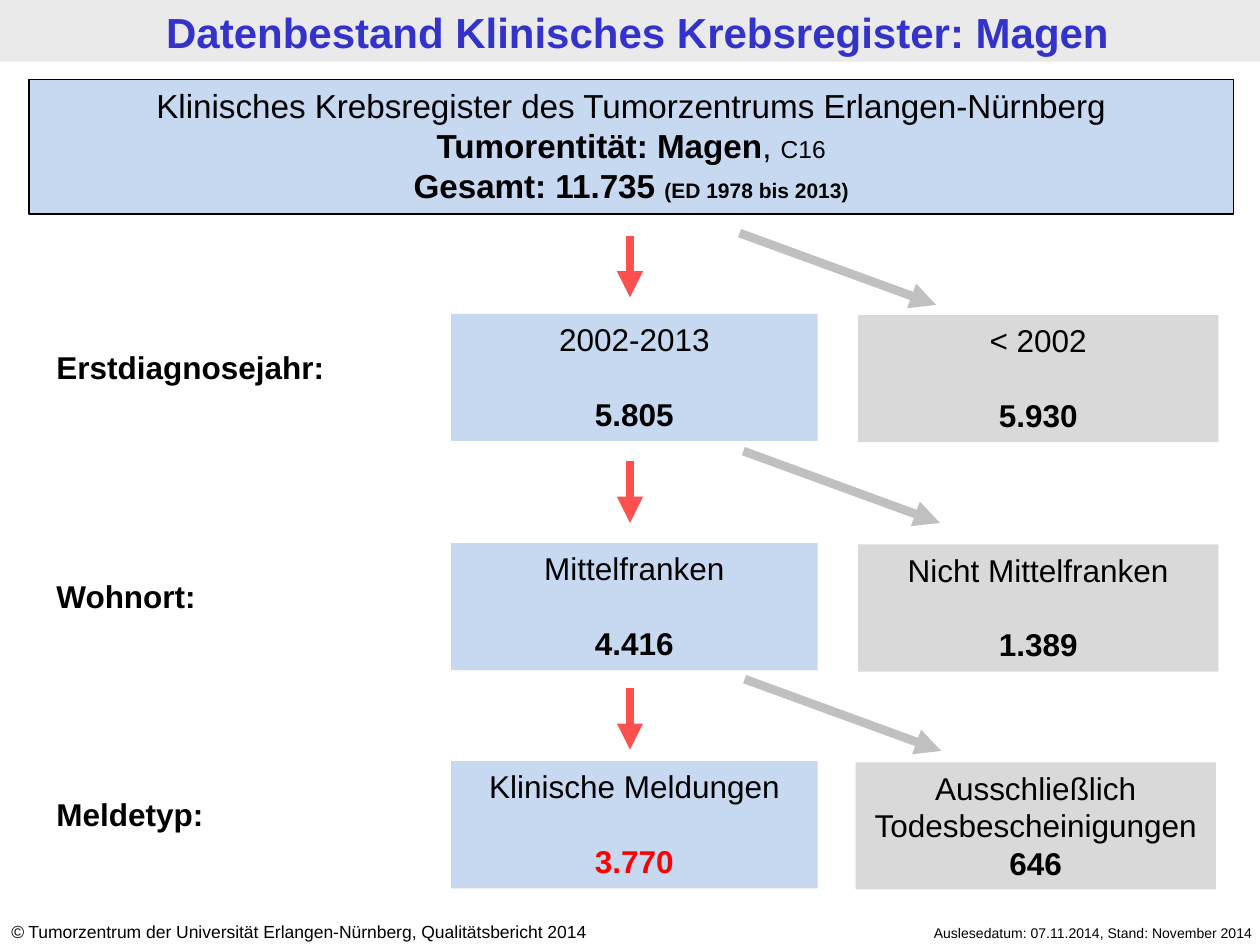
from dataclasses import dataclass

from lxml.etree import SubElement
from pptx import Presentation
from pptx.dml.color import RGBColor
from pptx.enum.shapes import MSO_CONNECTOR, MSO_SHAPE
from pptx.enum.text import MSO_ANCHOR, PP_ALIGN
from pptx.oxml.ns import qn
from pptx.util import Inches, Pt


@dataclass(frozen=True)
class Theme:
    """Colours, font and type sizes of the slide."""
    font: str = "Arial"
    text: str = "000000"
    title: str = "3333CC"
    result: str = "FF0000"
    band: str = "EAEAEA"
    included: str = "C6D9F1"
    excluded: str = "D9D9D9"
    main_arrow: str = "FF5050"
    side_arrow: str = "C0C0C0"
    title_size: int = 24
    register_size: int = 19
    body_size: int = 18
    code_size: int = 14
    period_size: int = 12
    copyright_size: int = 10
    date_size: int = 8


class SlideBuilder:
    """Draws styled elements on the current slide."""

    def __init__(self, slide, theme):
        self.slide = slide
        self.theme = theme

    def style(self, run, size, bold=False, color=None, italic=False):
        """Format one run."""
        run.font.name = self.theme.font
        run.font.size = Pt(size)
        run.font.bold = bold
        run.font.italic = italic
        run.font.color.rgb = RGBColor.from_string(color or self.theme.text)

    def set_lines(self, shape, lines, align, inset=(0.1, 0.05)):
        """Set the lines of a shape, each a list of (text, style) runs."""
        frame = shape.text_frame
        frame.word_wrap = True
        frame.vertical_anchor = MSO_ANCHOR.TOP
        frame.margin_left = frame.margin_right = Inches(inset[0])
        frame.margin_top = frame.margin_bottom = Inches(inset[1])
        for index, line in enumerate(lines):
            paragraph = frame.add_paragraph() if index else frame.paragraphs[0]
            paragraph.alignment = align
            for text, style in line:
                run = paragraph.add_run()
                run.text = text
                self.style(run, **style)

    def rectangle(self, left, top, width, height, fill, line=None):
        """Add a filled rectangle."""
        shape = self.slide.shapes.add_shape(
            MSO_SHAPE.RECTANGLE, Inches(left), Inches(top), Inches(width), Inches(height))
        shape.shadow.inherit = False
        shape.fill.solid()
        shape.fill.fore_color.rgb = RGBColor.from_string(fill)
        if line:
            shape.line.color.rgb = RGBColor.from_string(line)
            shape.line.width = Pt(0.75)
        else:
            shape.line.fill.background()
        return shape

    def title(self, text):
        """Fill the title placeholder and put the band behind it."""
        title = self.slide.shapes.title
        title.left, title.top = Inches(0.06), Inches(0.01)
        title.width, title.height = Inches(10), Inches(0.49)
        style = dict(size=self.theme.title_size, bold=True, color=self.theme.title)
        self.set_lines(title, [[(text, style)]], PP_ALIGN.CENTER, inset=(0.09, 0.04))
        band = self.rectangle(0, 0, 10, 0.49, self.theme.band)
        title.element.addprevious(band.element)

    def text(self, left, top, width, height, runs, align=PP_ALIGN.LEFT):
        """Add a one-line text box."""
        box = self.slide.shapes.add_textbox(
            Inches(left), Inches(top), Inches(width), Inches(height))
        self.set_lines(box, [runs], align)

    def count_box(self, left, top, width, fill, label, count, color=None, gap=True):
        """Add a box with a group name and its case count."""
        box = self.rectangle(left, top, width, 1.01, fill)
        size = self.theme.body_size
        lines = [[(label, dict(size=size))],
                 [(count, dict(size=size, bold=True, color=color))]]
        self.set_lines(box, lines, PP_ALIGN.CENTER)
        if gap:
            box.text_frame.paragraphs[1].space_before = Pt(21)

    def arrow(self, start, end, color):
        """Add a straight arrow."""
        connector = self.slide.shapes.add_connector(
            MSO_CONNECTOR.STRAIGHT, *(Inches(value) for value in start + end))
        connector.line.color.rgb = RGBColor.from_string(color)
        connector.line.width = Pt(5)
        properties = connector.element.spPr
        SubElement(properties.find(qn("a:ln")), qn("a:tailEnd"), type="triangle")
        SubElement(properties, qn("a:effectLst"))


def main():
    """Build and save the slide."""
    presentation = Presentation()
    presentation.slide_width, presentation.slide_height = Inches(10), Inches(7.5)
    slide = presentation.slides.add_slide(presentation.slide_layouts[5])
    theme = Theme()
    builder = SlideBuilder(slide, theme)
    builder.title("Datenbestand Klinisches Krebsregister: Magen")

    register = builder.rectangle(0.23, 0.63, 9.56, 1.07, theme.included, theme.text)
    plain = dict(size=theme.register_size)
    bold = dict(size=theme.register_size, bold=True)
    builder.set_lines(register, [
        [("Klinisches Krebsregister des Tumorzentrums Erlangen-Nürnberg", plain)],
        [("Tumorentität: Magen", bold), (", ", plain), ("C16", dict(size=theme.code_size))],
        [("Gesamt: 11.735 ", bold),
         ("(ED 1978 bis 2013)", dict(size=theme.period_size, bold=True))],
    ], PP_ALIGN.CENTER, inset=(0.11, 0.05))

    steps = [
        (2.49, "Erstdiagnosejahr:", ("2002-2013", "5.805", None),
         (6.81, "< 2002", "5.930", True), 1.87, (5.87, 1.85)),
        (4.31, "Wohnort:", ("Mittelfranken", "4.416", None),
         (6.81, "Nicht Mittelfranken", "1.389", True), 3.66, (5.9, 3.58)),
        (6.04, "Meldetyp:", ("Klinische Meldungen", "3.770", theme.result),
         (6.79, "Ausschließlich Todesbescheinigungen", "646", False), 5.46, (5.91, 5.39)),
    ]
    for top, criterion, included, excluded, arrow_top, side_start in steps:
        builder.text(0.35, top + 0.22, 2.76, 0.4,
                     [(criterion, dict(size=theme.body_size, bold=True))])
        label, count, color = included
        builder.count_box(3.58, top, 2.91, theme.included, label, count, color)
        left, label, count, gap = excluded
        builder.count_box(left, top + 0.01, 2.86, theme.excluded, label, count, gap=gap)
        builder.arrow((5, arrow_top), (5, arrow_top + 0.49), theme.main_arrow)
        side_end = (side_start[0] + 1.56, side_start[1] + 0.57)
        builder.arrow(side_start, side_end, theme.side_arrow)

    builder.text(-0.01, 7.26, 5.24, 0.27, [
        ("©", dict(size=theme.copyright_size, italic=True)),
        (" Tumorzentrum der Universität Erlangen-Nürnberg, Qualitätsbericht 2014",
         dict(size=theme.copyright_size))])
    builder.text(6.65, 7.29, 3.39, 0.24,
                 [("Auslesedatum: 07.11.2014, Stand: November 2014",
                   dict(size=theme.date_size))], PP_ALIGN.RIGHT)
    presentation.save("out.pptx")


if __name__ == "__main__":
    main()
